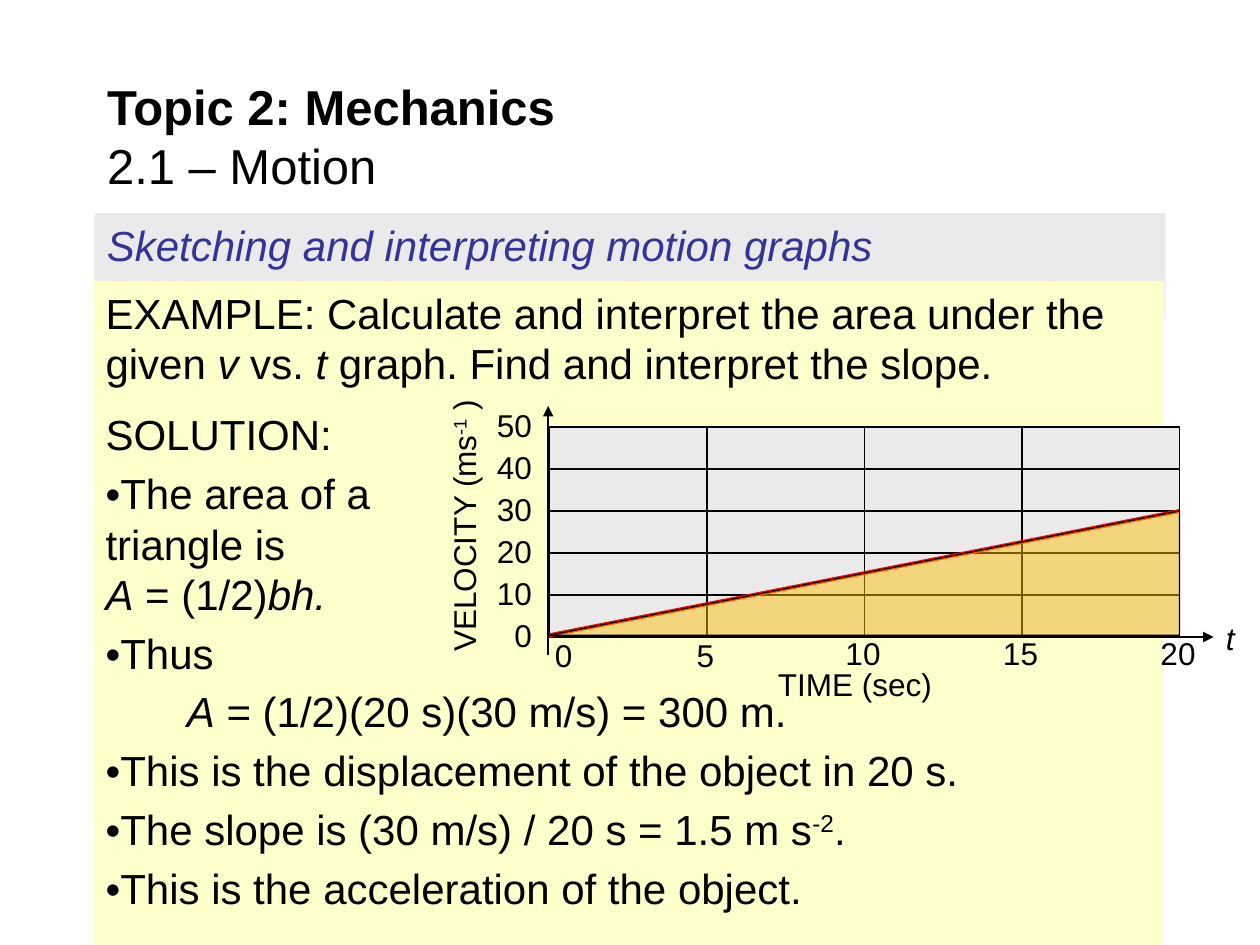
from lxml.etree import SubElement
from pptx import Presentation
from pptx.dml.color import RGBColor
from pptx.enum.shapes import MSO_CONNECTOR, MSO_SHAPE
from pptx.enum.text import MSO_ANCHOR, MSO_AUTO_SIZE, PP_ALIGN
from pptx.oxml.ns import qn
from pptx.util import Pt

COLORS = {name: RGBColor.from_string(value) for name, value in {
    "black": "000000", "heading": "333399", "gray": "EAEAEA",
    "panel": "FFFFCC", "red": "FF0000", "area": "FFC000",
}.items()}


def write_runs(paragraph, runs, size, color="black"):
    for text, style in runs:
        if style == "break":
            paragraph.add_line_break()
            continue
        run = paragraph.add_run()
        run.text = text
        run.font.name = "Arial"
        run.font.size = Pt(size)
        run.font.color.rgb = COLORS[color]
        run.font.bold = style == "bold"
        run.font.italic = style == "italic"
        if style == "super":
            run.font._element.set("baseline", "30000")


def add_label(shapes, left, top, width, runs, align=PP_ALIGN.LEFT):
    label = shapes.add_textbox(Pt(left), Pt(top), Pt(width), Pt(29))
    label.text_frame.word_wrap = False
    label.text_frame.auto_size = MSO_AUTO_SIZE.SHAPE_TO_FIT_TEXT
    paragraph = label.text_frame.paragraphs[0]
    paragraph.alignment = align
    write_runs(paragraph, runs, 18)
    return label


presentation = Presentation()
presentation.slide_width = Pt(720)
presentation.slide_height = Pt(540)
slide = presentation.slides.add_slide(presentation.slide_layouts[5])

panels = [
    (54, 121.75, 60, "gray", "heading", [
        (4.8, 0, [("Sketching and interpreting motion graphs", "italic")]),
    ]),
    (53.25, 160.5, 379.5, "panel", "black", [
        (4.8, 0, [("EXAMPLE: Calculate and interpret the area under the given ", ""),
                  ("v", "italic"), (" vs. ", ""), ("t", "italic"),
                  (" graph. Find and interpret the slope.", "")]),
        (12, 0, [("SOLUTION:", "")]),
        (4.8, 0, [("•The area of a", ""), ("", "break"), ("triangle is", ""), ("", "break"),
                  ("A", "italic"), (" = (1/2)", ""), ("bh.", "italic")]),
        (4.8, 0, [("•Thus", "")]),
        (4.8, 46.5, [("A", "italic"), (" = (1/2)(20 s)(30 m/s) = 300 m.", "")]),
        (4.8, 0, [("•This is the displacement of the object in 20 s.", "")]),
        (4.8, 0, [("•The slope is (30 m/s) / 20 s = 1.5 m s", ""), ("-2", "super"), (".", "")]),
        (4.8, 0, [("•This is the acceleration of the object.", "")]),
    ]),
]
for left, top, height, fill, color, paragraphs in panels:
    panel = slide.shapes.add_shape(MSO_SHAPE.RECTANGLE, Pt(left), Pt(top), Pt(612), Pt(height))
    panel.shadow.inherit = False
    panel.fill.solid()
    panel.fill.fore_color.rgb = COLORS[fill]
    panel.line.fill.background()
    text_frame = panel.text_frame
    text_frame.word_wrap = True
    text_frame.vertical_anchor = MSO_ANCHOR.TOP
    for index, (space, indent, runs) in enumerate(paragraphs):
        paragraph = text_frame.add_paragraph() if index else text_frame.paragraphs[0]
        paragraph.alignment = PP_ALIGN.LEFT
        paragraph.space_before = Pt(space)
        if indent:
            paragraph._p.get_or_add_pPr().set("marL", str(Pt(indent)))
        write_runs(paragraph, runs, 24, color)

title = slide.shapes.title
title.left, title.top, title.width, title.height = Pt(54), Pt(42), Pt(612), Pt(70.5)
title.text_frame.word_wrap = True
title.text_frame.auto_size = MSO_AUTO_SIZE.NONE
title.text_frame.vertical_anchor = MSO_ANCHOR.MIDDLE
title_paragraph = title.text_frame.paragraphs[0]
title_paragraph.alignment = PP_ALIGN.LEFT
write_runs(title_paragraph, [("Topic 2: Mechanics", "bold"), ("", "break"), ("2.1 – Motion", "")], 28)

GRID_LEFT, GRID_TOP = 314, 244
CELL_WIDTH, CELL_HEIGHT = 90, 24
COLUMNS, ROWS = 4, 5
GRID_RIGHT = GRID_LEFT + COLUMNS * CELL_WIDTH
GRID_BOTTOM = GRID_TOP + ROWS * CELL_HEIGHT
graph = slide.shapes.add_group_shape().shapes

for row in range(ROWS):
    for column in range(COLUMNS):
        cell = graph.add_shape(
            MSO_SHAPE.RECTANGLE, Pt(GRID_LEFT + column * CELL_WIDTH),
            Pt(GRID_TOP + row * CELL_HEIGHT), Pt(CELL_WIDTH), Pt(CELL_HEIGHT))
        cell.shadow.inherit = False
        cell.fill.solid()
        cell.fill.fore_color.rgb = COLORS["gray"]
        cell.line.color.rgb = COLORS["black"]
        cell.line.width = Pt(0.75)

velocity_label = add_label(graph, 185, 285, 160, [("VELOCITY (ms", ""), ("-1", "super"), (" )", "")])
velocity_label.rotation = 270
add_label(graph, 693.5, 350, 19.5, [("t", "italic")])
add_label(graph, 437.5, 376.5, 108, [("TIME (sec)", "")])

for step in range(ROWS + 1):
    width = 34.5 if step else 24.5
    add_label(graph, 311 - width, 348.5 - step * CELL_HEIGHT, width,
              [(str(step * 10), "")], PP_ALIGN.RIGHT)

for step in range(COLUMNS + 1):
    width = 34.5 if step > 1 else 24.5
    center = GRID_LEFT + step * CELL_WIDTH + (-1 if step else 8)
    add_label(graph, center - width / 2, 359 if step > 1 else 360, width,
              [(str(step * 5), "")], PP_ALIGN.RIGHT)

lines = [
    (313.25, 374.5, 313.25, 232, "black", 1.5, True),
    (315, GRID_BOTTOM, 693.5, GRID_BOTTOM, "black", 1.5, True),
    (GRID_RIGHT, 292, GRID_LEFT, 363, "red", 2.25, False),
]
for start_x, start_y, end_x, end_y, color, width, has_arrow in lines:
    line = graph.add_connector(MSO_CONNECTOR.STRAIGHT, Pt(start_x), Pt(start_y), Pt(end_x), Pt(end_y))
    line.line.color.rgb = COLORS[color]
    line.line.width = Pt(width)
    if has_arrow:
        SubElement(line.line._get_or_add_ln(), qn("a:tailEnd"), type="triangle")
    SubElement(line._element.spPr, qn("a:effectLst"))

builder = slide.shapes.build_freeform(Pt(GRID_LEFT), Pt(363))
builder.add_line_segments([(Pt(GRID_RIGHT), Pt(292)), (Pt(GRID_RIGHT), Pt(363))], close=True)
area = builder.convert_to_shape()
area.shadow.inherit = False
area.fill.solid()
area.fill.fore_color.rgb = COLORS["area"]
area_color = area._element.spPr.find(qn("a:solidFill")).find(qn("a:srgbClr"))
SubElement(area_color, qn("a:alpha"), val="47000")
area.line.color.rgb = COLORS["black"]
area.line.width = Pt(0.75)

presentation.save("out.pptx")
